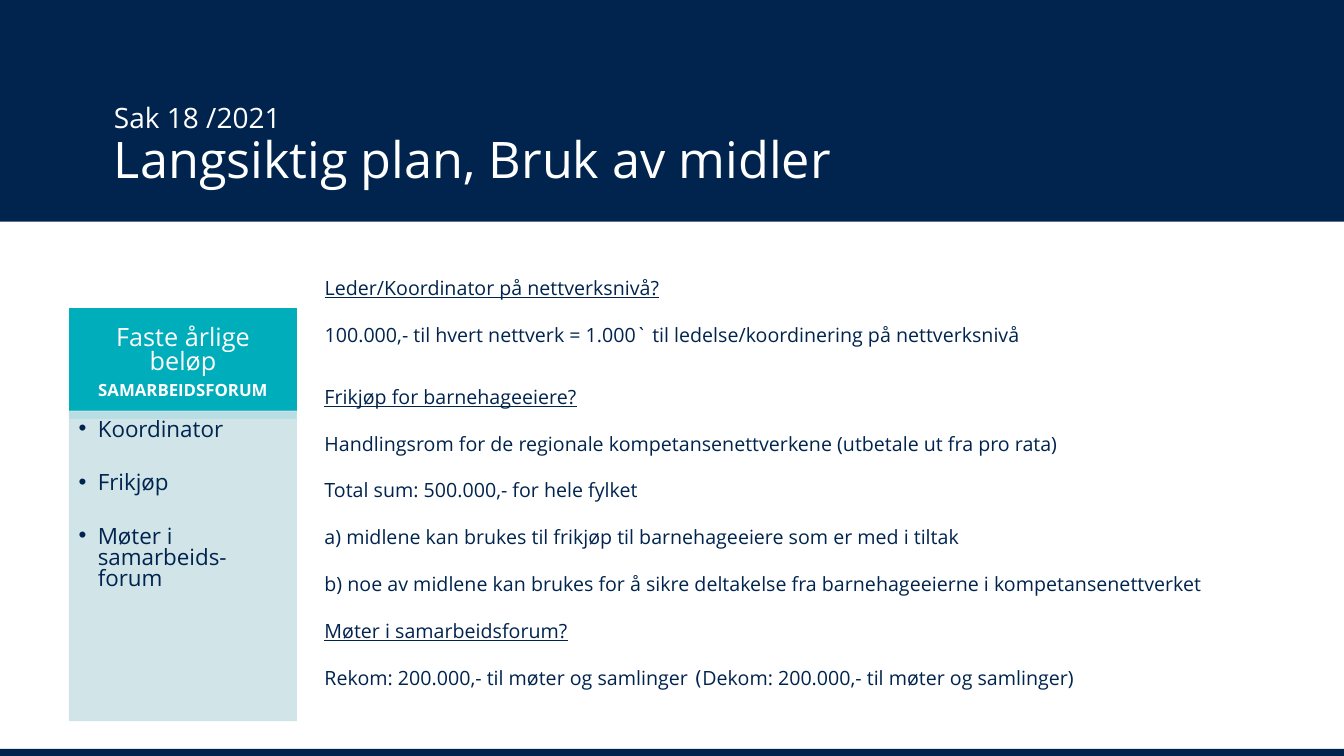
from lxml.etree import SubElement
from pptx import Presentation
from pptx.dml.color import RGBColor
from pptx.enum.shapes import MSO_SHAPE
from pptx.enum.text import MSO_ANCHOR, MSO_AUTO_SIZE, PP_ALIGN
from pptx.oxml.ns import qn
from pptx.util import Inches, Pt

WIDTH, HEIGHT = 13.33, 7.5
NAVY, TEAL, PALE, WHITE = "00244E", "00ADBA", "CCE3E7", "FFFFFF"
FONT = "Open Sans"

NETWORK_LEADER = [
    "Leder/Koordinator på nettverksnivå?",
    "100.000,- til hvert nettverk = 1.000` til ledelse/koordinering på nettverksnivå",
]
FUNDING = [
    "Frikjøp for barnehageeiere?",
    "Handlingsrom for de regionale kompetansenettverkene (utbetale ut fra pro rata)",
    "Total sum: 500.000,- for hele fylket",
    "a) midlene kan brukes til frikjøp til barnehageeiere som er med i tiltak",
    "b) noe av midlene kan brukes for å sikre deltakelse fra barnehageeierne i kompetansenettverket",
    "Møter i samarbeidsforum?",
]
MEETINGS = [
    ("Rekom: 200.000,- til møter og samlinger", FONT),
    (" (", "DejaVu Sans"),
    ("Dekom: 200.000,- til møter og samlinger)", FONT),
]
FIXED_ITEMS = ["Koordinator", "Frikjøp", "Møter i samarbeids-forum"]


def color(hex_value):
    return RGBColor.from_string(hex_value)


def place(shape, box):
    shape.left, shape.top, shape.width, shape.height = map(Inches, box)


def add_box(slide, box, fill):
    rect = slide.shapes.add_shape(MSO_SHAPE.RECTANGLE, *map(Inches, box))
    rect.shadow.inherit = False
    rect.fill.solid()
    rect.fill.fore_color.rgb = color(fill)
    rect.line.color.rgb = color(fill)
    rect.line.width = Pt(0.85)
    return rect


def setup_frame(shape, anchor, margins=(0.1, 0.05, 0.1, 0.05)):
    frame = shape.text_frame
    frame.word_wrap = True
    frame.auto_size = MSO_AUTO_SIZE.NONE
    frame.vertical_anchor = anchor
    (frame.margin_left, frame.margin_top,
     frame.margin_right, frame.margin_bottom) = map(Inches, margins)
    return frame


def set_bullet(paragraph, char=None, indent=0.0):
    props = paragraph._p.get_or_add_pPr()
    props.set("marL", str(Inches(indent)))
    props.set("indent", str(-Inches(indent)))
    if char:
        SubElement(props, qn("a:buFont"), typeface="Arial")
        SubElement(props, qn("a:buChar"), char=char)
    else:
        SubElement(props, qn("a:buNone"))


def style(paragraph, size, ink, spacing, after=0, align=PP_ALIGN.LEFT, font=FONT):
    paragraph.alignment = align
    paragraph.line_spacing = spacing
    paragraph.space_before = Pt(0)
    paragraph.space_after = Pt(after)
    if font:
        paragraph.font.name = font
    if size:
        paragraph.font.size = Pt(size)
    paragraph.font.color.rgb = color(ink)


def next_paragraph(frame, index):
    return frame.add_paragraph() if index else frame.paragraphs[0]


# Navy bands at the top and bottom, behind the placeholders
def add_bands(slide):
    for top, height in ((-0.11, 2.31), (7.43, 0.08)):
        band = add_box(slide, (0, top, WIDTH, height), NAVY)
        band.line.fill.background()
        slide.shapes._spTree.insert(2, band._element)


# Case number above the heading
def add_title(slide, box):
    title = slide.shapes.title
    place(title, box)
    frame = setup_frame(title, MSO_ANCHOR.BOTTOM, (0.1, 0.05, 0.1, 0))
    heading = frame.paragraphs[0]
    style(heading, None, WHITE, 0.9)
    case = heading.add_run()
    case.text = "Sak 18 /2021 "
    case.font.size = Pt(20)
    heading.add_line_break()
    subject = heading.add_run()
    subject.text = "Langsiktig plan, Bruk av midler"
    subject.font.size = Pt(36)


# Teal header over a translucent list panel
def add_fixed_amounts(slide, box):
    left, top, width, height = box
    header_height, list_offset = 1.09, 1.02
    header = add_box(slide, (left, top, width, header_height), TEAL)
    frame = setup_frame(header, MSO_ANCHOR.MIDDLE, (0.14, 0.08, 0.14, 0.08))
    for i, (text, size) in enumerate((("Faste årlige beløp", 18), ("SAMARBEIDSFORUM", 12))):
        line = next_paragraph(frame, i)
        line.text = text
        style(line, size, WHITE, 0.79, 0 if i else 6, PP_ALIGN.CENTER)
        line.font.bold = bool(i)

    panel = add_box(slide, (left, top + list_offset, width, height - list_offset), PALE)
    for tint in panel._element.spPr.iter(qn("a:srgbClr")):
        SubElement(tint, qn("a:alpha"), val="90000")
    frame = setup_frame(panel, MSO_ANCHOR.TOP, (0.09, 0.09, 0.12, 0.14))
    for i, text in enumerate(FIXED_ITEMS):
        item = next_paragraph(frame, i)
        item.text = text
        set_bullet(item, "•", 0.19)
        style(item, 16, NAVY, 0.79, 23)


# Underlined questions, each followed by its answers
def add_answers(shape, box, texts):
    place(shape, box)
    frame = setup_frame(shape, MSO_ANCHOR.TOP)
    for i, text in enumerate(texts):
        line = next_paragraph(frame, i)
        set_bullet(line)
        if isinstance(text, str):
            line.text = text
            style(line, 14, NAVY, 1.07, 15.5)
            line.font.underline = text.endswith("?")
        else:
            style(line, 14, NAVY, 1.07, 15.5, font=None)
            for part, font in text:
                run = line.add_run()
                run.text = part
                run.font.name = font


def main():
    deck = Presentation()
    deck.slide_width, deck.slide_height = Inches(WIDTH), Inches(HEIGHT)
    slide = deck.slides.add_slide(deck.slide_layouts[1])
    add_bands(slide)
    add_title(slide, (1.03, 0.7, 11.02, 1.18))
    add_fixed_amounts(slide, (0.69, 3.06, 2.25, 4.09))
    add_answers(slide.placeholders[1], (3.12, 2.67, 9.06, 1.08), NETWORK_LEADER)
    funding = slide.shapes.add_textbox(0, 0, 0, 0)
    add_answers(funding, (3.12, 3.75, 10.03, 3.6), FUNDING + [MEETINGS])
    deck.save("out.pptx")


if __name__ == "__main__":
    main()
